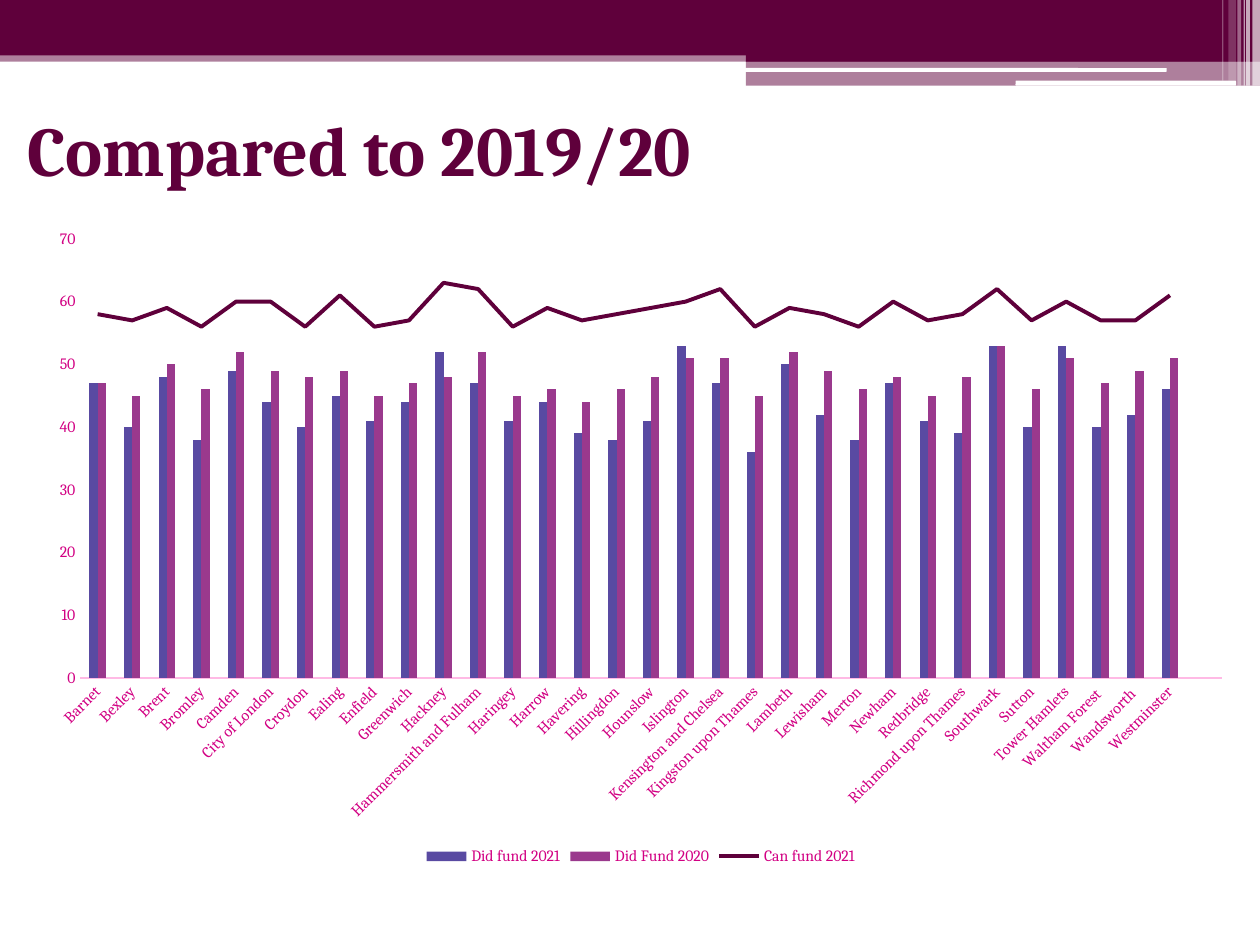
from lxml import etree
from pptx import Presentation
from pptx.chart.data import CategoryChartData
from pptx.dml.color import RGBColor
from pptx.enum.chart import XL_CHART_TYPE as CT, XL_LEGEND_POSITION as LP, XL_TICK_MARK as TM
from pptx.enum.shapes import MSO_SHAPE as MS
from pptx.enum.text import MSO_ANCHOR, PP_ALIGN
from pptx.oxml.ns import qn
from pptx.util import Inches, Pt

FONT = "Cambria"
PLUM, WHITE, PINK, PALE_PINK, DARK = "5F003B", "FFFFFF", "D20083", "FFBAE5", "30001E"
TITLE = "Compared to 2019/20"

# Places are left, top, width, height in percent of the slide
TITLE_AT = (1.2, 7.87, 90, 15.6)
CHART_AT = (2.8, 22.93, 96.1, 69.2)

# Header bands: place, shape, colour, opacity in percent
BANDS = [
    ((0, 5.33, 100, 1.2), MS.RECTANGLE, PLUM, 50),
    ((0, 0, 100, 4.53), MS.RECTANGLE, PLUM, 100),
    ((0, 4.53, 100, 1.33), MS.RECTANGLE, PLUM, 100),
    ((59.2, 5.2, 40.8, 1.33), MS.RECTANGLE, PLUM, 100),
    ((59.2, 6.4, 40.8, 2.67), MS.RECTANGLE, PLUM, 50),
    ((59.1, 7.2, 33.5, 0.4), MS.ROUNDED_RECTANGLE, WHITE, 100),
    ((80.6, 8.53, 17.5, 0.53), MS.ROUNDED_RECTANGLE, WHITE, 100),
]
# Vertical stripes at the right edge: left, width, height, opacity
STRIPES = [
    (99.4, 0.6, 9.07, 65), (98.9, 0.3, 9.07, 65), (98.7, 0.1, 9.07, 60),
    (98.2, 0.3, 9.07, 40), (97.5, 0.6, 8.53, 20), (97, 0.1, 8.53, 30),
]

# Borough, did fund 2021, did fund 2020, can fund 2021
SERIES = [("Did fund 2021", "594AA2"), ("Did Fund 2020", "9A398D"), ("Can fund 2021", PLUM)]
BOROUGHS = [
    ("Barnet", 47, 47, 58), ("Bexley", 40, 45, 57), ("Brent", 48, 50, 59),
    ("Bromley", 38, 46, 56), ("Camden", 49, 52, 60), ("City of London", 44, 49, 60),
    ("Croydon", 40, 48, 56), ("Ealing", 45, 49, 61), ("Enfield", 41, 45, 56),
    ("Greenwich", 44, 47, 57), ("Hackney", 52, 48, 63),
    ("Hammersmith and Fulham", 47, 52, 62), ("Haringey", 41, 45, 56),
    ("Harrow", 44, 46, 59), ("Havering", 39, 44, 57), ("Hillingdon", 38, 46, 58),
    ("Hounslow", 41, 48, 59), ("Islington", 53, 51, 60),
    ("Kensington and Chelsea", 47, 51, 62), ("Kingston upon Thames", 36, 45, 56),
    ("Lambeth", 50, 52, 59), ("Lewisham", 42, 49, 58), ("Merton", 38, 46, 56),
    ("Newham", 47, 48, 60), ("Redbridge", 41, 45, 57),
    ("Richmond upon Thames", 39, 48, 58), ("Southwark", 53, 53, 62),
    ("Sutton", 40, 46, 57), ("Tower Hamlets", 53, 51, 60),
    ("Waltham Forest ", 40, 47, 57), ("Wandsworth ", 42, 49, 57),
    ("Westminster", 46, 51, 61),
    ("", None, None, None),  # empty last slot on the axis
]

prs = Presentation()
prs.slide_width, prs.slide_height = Inches(10), Inches(7.5)


def rgb(color):
    return RGBColor.from_string(color)


def place(at):
    w, h = prs.slide_width, prs.slide_height
    return [int(share * side / 100) for share, side in zip(at, (w, h, w, h))]


def set_font(font, size, color, bold=False):
    font.name, font.size, font.bold = FONT, Pt(size), bold
    font.color.rgb = rgb(color)


def add_band(slide, at, shape, color, opacity):
    sp = slide.shapes.add_shape(shape, *place(at))
    sp.shadow.inherit = False
    sp.line.fill.background()
    sp.fill.solid()
    sp.fill.fore_color.rgb = rgb(color)
    if opacity < 100:
        clr = sp.fill._xPr.find(".//" + qn("a:srgbClr"))
        etree.SubElement(clr, qn("a:alpha")).set("val", str(opacity * 1000))


def move_to_line(chart, index):
    """Move one column series into a line plot on the same axes."""
    bar = chart.plots[0]._element
    ser = bar.findall(qn("c:ser"))[index]
    for tag in ("c:invertIfNegative",):
        for el in ser.findall(qn(tag)):
            ser.remove(el)
    line = etree.Element(qn("c:lineChart"))
    etree.SubElement(line, qn("c:grouping")).set("val", "standard")
    etree.SubElement(line, qn("c:varyColors")).set("val", "0")
    line.append(ser)
    etree.SubElement(line, qn("c:marker")).set("val", "1")
    for ax in bar.findall(qn("c:axId")):
        etree.SubElement(line, qn("c:axId")).set("val", ax.get("val"))
    bar.addnext(line)


def add_funding_chart(slide):
    data = CategoryChartData()
    names, *columns = zip(*BOROUGHS)
    data.categories = names
    for (name, _), values in zip(SERIES, columns):
        data.add_series(name, values)
    chart = slide.shapes.add_chart(CT.COLUMN_CLUSTERED, *place(CHART_AT), data).chart
    set_font(chart.font, 10, DARK)
    chart.has_title = False

    # Two column series and one line
    move_to_line(chart, 2)
    columns_plot, line_plot = chart.plots
    columns_plot.gap_width, columns_plot.overlap = 219, 0
    columns_plot.vary_by_categories = False
    for s, (_, color) in zip(columns_plot.series, SERIES):
        s.format.fill.solid()
        s.format.fill.fore_color.rgb = rgb(color)
    s = line_plot.series[0]
    s.smooth = False
    s.marker.style = None
    s.marker._element.get_or_add_marker().get_or_add_symbol().set("val", "none")
    s.format.line.width = Pt(2.25)
    s.format.line.color.rgb = rgb(SERIES[2][1])

    # Axes
    cat, val = chart.category_axis, chart.value_axis
    for axis in (cat, val):
        axis.major_tick_mark = axis.minor_tick_mark = TM.NONE
        axis.has_major_gridlines = False
        set_font(axis.tick_labels.font, 9, PINK)
    cat.format.line.width = Pt(0.75)
    cat.format.line.color.rgb = rgb(PALE_PINK)
    cat._element.find(qn("c:txPr")).find(qn("a:bodyPr")).set("rot", "-2700000")
    val.format.line.fill.background()
    val.minimum_scale, val.maximum_scale, val.major_unit = 0, 70, 10

    # Legend
    chart.has_legend = True
    chart.legend.position = LP.BOTTOM
    chart.legend.include_in_layout = False
    set_font(chart.legend.font, 9, PINK)


def main():
    slide = prs.slides.add_slide(prs.slide_layouts[5])
    for band in BANDS:
        add_band(slide, *band)
    for left, width, height, opacity in STRIPES:
        add_band(slide, (left, 0, width, height), MS.RECTANGLE, WHITE, opacity)

    # Title, in front of the bands
    title = slide.shapes.title
    title.left, title.top, title.width, title.height = place(TITLE_AT)
    slide.shapes._spTree.append(title._element)
    tf = title.text_frame
    tf.text = TITLE
    tf.vertical_anchor = MSO_ANCHOR.MIDDLE
    p = tf.paragraphs[0]
    p.alignment = PP_ALIGN.LEFT
    set_font(p.runs[0].font, 40, PLUM, bold=True)

    add_funding_chart(slide)
    prs.save("out.pptx")


if __name__ == "__main__":
    main()
